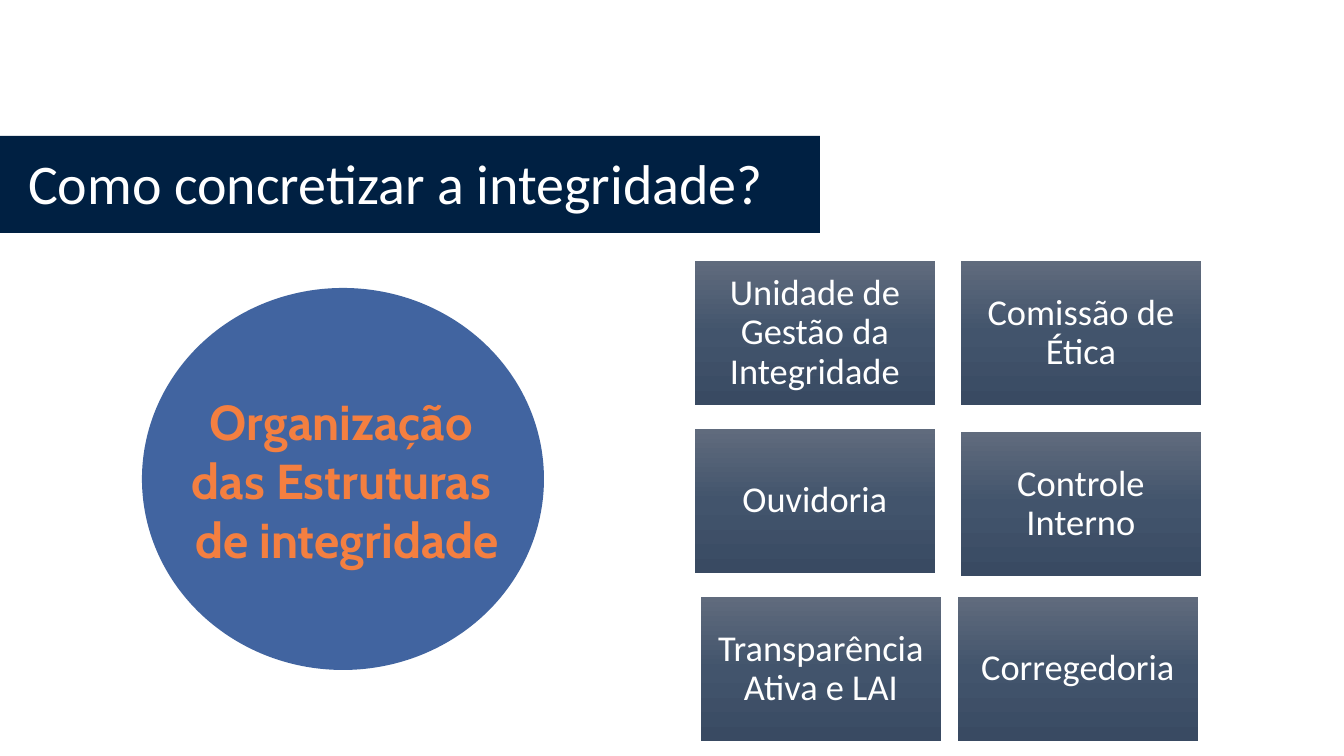
from copy import deepcopy
from lxml.etree import SubElement
from pptx import Presentation
from pptx.dml.color import RGBColor
from pptx.enum.shapes import MSO_SHAPE as SHAPE
from pptx.enum.text import MSO_ANCHOR as ANCHOR, MSO_AUTO_SIZE as AUTO, PP_ALIGN as ALIGN
from pptx.oxml.ns import qn
from pptx.util import Inches, Pt

NAVY = RGBColor(0x00, 0x20, 0x42)
BLUE = RGBColor(0x2F, 0x55, 0x97)
ORANGE = RGBColor(0xF4, 0x7F, 0x40)
WHITE = RGBColor(0xFF, 0xFF, 0xFF)
SLATE = [RGBColor(0x60, 0x6B, 0x7D), RGBColor(0x42, 0x54, 0x6C), RGBColor(0x39, 0x4A, 0x62)]
SCALE = Inches(1) / 100.8
BOX_W, BOX_H = 240, 144
UNITS = [
    (695, 261, "Unidade de Gestão da Integridade"),
    (961, 261, "Comissão de Ética"),
    (695, 429, "Ouvidoria"),
    (961, 432, "Controle Interno"),
    (701, 597, "Transparência Ativa e LAI"),
    (958, 597, "Corregedoria"),
]


def emu(*lengths):
    return [round(n * SCALE) for n in lengths]


class Deck:
    """Holds the slide style and draws each kind of element on the current slide."""

    body_font, accent_font = "Calibri", "Cabin"

    def __init__(self):
        self.prs = Presentation()
        self.prs.slide_width, self.prs.slide_height = emu(1344, 756)
        self.s = self.prs.slides.add_slide(self.prs.slide_layouts[5])

    def set_text(self, tf, lines, font, size, color, align, bold=False):
        tf.word_wrap = True
        tf.text = "\n".join(lines)
        for p in tf.paragraphs:
            p.alignment = align
            p.font.name, p.font.size, p.font.bold = font, Pt(size), bold
            p.font.color.rgb = color

    def shape(self, kind, x, y, w, h, color=None, alpha=None):
        sp = self.s.shapes.add_shape(kind, *emu(x, y, w, h))
        sp.shadow.inherit = False
        sp.line.fill.background()
        if color is not None:
            sp.fill.solid()
            sp.fill.fore_color.rgb = color
        if alpha is not None:
            clr = sp.element.spPr.find(".//" + qn("a:srgbClr"))
            SubElement(clr, qn("a:alpha"), val=str(alpha * 1000))
        return sp

    def title(self, x, y, w, h, text):
        sp = self.s.shapes.title
        sp.left, sp.top, sp.width, sp.height = emu(x, y, w, h)
        tf = sp.text_frame
        self.set_text(tf, [text], self.body_font, 40, WHITE, ALIGN.LEFT)
        tf.auto_size, tf.vertical_anchor = AUTO.NONE, ANCHOR.TOP
        self.s.shapes.element.append(sp.element)

    def label(self, x, y, w, h, lines):
        tf = self.s.shapes.add_textbox(*emu(x, y, w, h)).text_frame
        self.set_text(tf, lines, self.accent_font, 35, ORANGE, ALIGN.CENTER, True)

    def box(self, x, y, text):
        sp = self.shape(SHAPE.RECTANGLE, x, y, BOX_W, BOX_H)
        sp.fill.gradient()
        sp.fill.gradient_angle = 270
        stops = sp.element.spPr.find(".//" + qn("a:gsLst"))
        stops.insert(1, deepcopy(stops[0]))
        for i, (stop, color) in enumerate(zip(sp.fill.gradient_stops, SLATE)):
            stop.position, stop.color.rgb = i / 2, color
        tf = sp.text_frame
        tf.margin_left, tf.margin_top, tf.margin_right, tf.margin_bottom = emu(11, 11, 11, 11)
        tf.vertical_anchor = ANCHOR.MIDDLE
        self.set_text(tf, [text], self.body_font, 26, WHITE, ALIGN.CENTER)
        tf.paragraphs[0].line_spacing = 0.9


def main():
    deck = Deck()
    deck.shape(SHAPE.RECTANGLE, 0, 136, 820, 97, NAVY)
    deck.title(18, 143, 802, 109, "Como concretizar a integridade?")
    deck.shape(SHAPE.OVAL, 142, 288, 402, 382, BLUE, 91)
    deck.label(138, 387, 418, 219, ["Organização ", "das Estruturas ", "de integridade"])
    for x, y, text in UNITS:
        deck.box(x, y, text)
    deck.prs.save("out.pptx")


if __name__ == "__main__":
    main()
